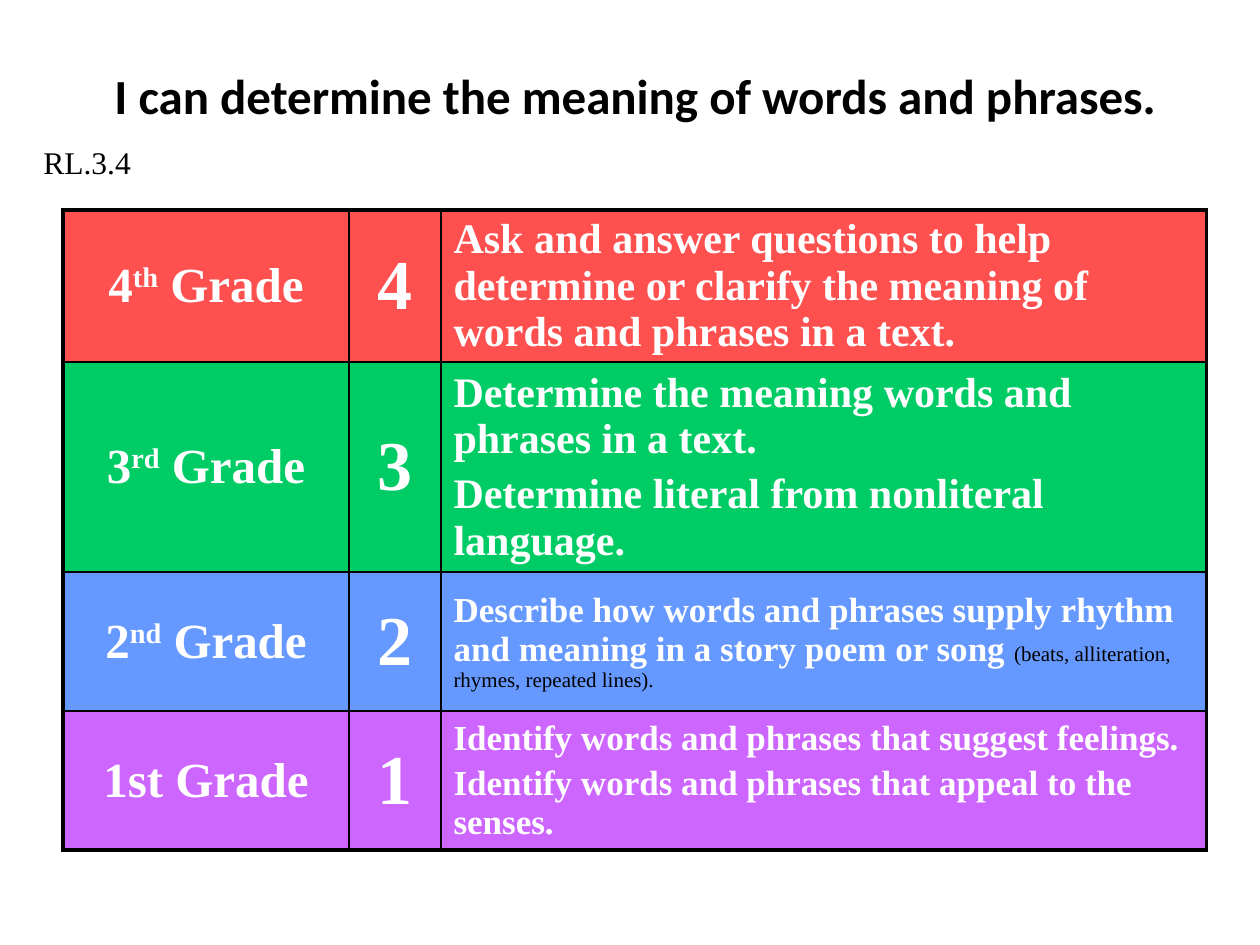
"""Build a slide with a learning goal and its four grade levels."""
from lxml.etree import SubElement as Sub
from pptx import Presentation as Deck
from pptx.dml.color import RGBColor as RGB
from pptx.enum.text import MSO_ANCHOR as Anchor, PP_ALIGN as Align
from pptx.oxml.ns import qn
from pptx.util import Pt

PX = 914400 / 126
HUE = {"ink": "000000", "text": "FFFFFF", "red": "FF5050",
       "green": "00CC66", "blue": "6699FF", "plum": "CC66FF"}
SERIF = "Times New Roman"


def px(*nums):
    return [round(n * PX) for n in nums]


def write(para, text, size, hue="text", bold=True, face=SERIF, base=0):
    run = para.add_run()
    run.text = text
    form = {"name": face, "size": Pt(size), "bold": bold}
    for key, val in form.items():
        setattr(run.font, key, val)
    run.font.color.rgb = RGB.from_string(HUE[hue])
    if base:
        run.font._element.set("baseline", str(base * 1000))


deck = Deck()
deck.slide_width, deck.slide_height = px(1260, 945)
slide = deck.slides.add_slide(deck.slide_layouts[6])

labels = [
    ((52, 32, 1166, 126), "I can determine the meaning of words and phrases.",
     28, True, "Calibri", Anchor.MIDDLE, Align.CENTER),
    ((31, 137, 179, 50), "RL.3.4", 18, False, SERIF, Anchor.TOP, Align.LEFT),
]
for place, text, size, bold, face, anchor, align in labels:
    frame = slide.shapes.add_textbox(*px(*place)).text_frame
    form = {"word_wrap": True, "vertical_anchor": anchor}
    for key, val in form.items():
        setattr(frame, key, val)
    para = frame.paragraphs[0]
    para.alignment = align
    write(para, text, size, "ink", bold, face)

levels = [
    ("red", 152, [("4", 0), ("th", 30), (" Grade", 0)], "4", 24,
     ["Ask and answer questions to help determine or clarify the meaning "
      "of words and phrases in a text."], "",
     [(2.25, 1, 2.25, 1.5), (1, 1, 2.25, 1.5), (1, 2, 2.25, 1.5)]),
    ("green", 207, [("3", 0), ("rd", 30), (" Grade", 0)], "3", 24,
     ["Determine the meaning words and phrases in a text.",
      "Determine literal from nonliteral language."], "",
     [(2.25, 1, 1.5, 1), (1, 1, 1.5, 1), (1, 2, 1.5, 1)]),
    ("blue", 139, [("2", 0), ("nd", 30), (" Grade", 0)], "2", 20,
     ["Describe how words and phrases supply rhythm and meaning in a story "
      "poem or song "], "(beats, alliteration, rhymes, repeated lines).",
     [(2.25, 1, 1, 1), (1, 1, 1, 1), (1, 2, 1, 1.5)]),
    ("plum", 139, [("1st Grade", 0)], "1", 20,
     ["Identify words and phrases that suggest feelings.",
      "Identify words and phrases that appeal to the senses."], "",
     [(2.25, 1, 1, 2), (1, 1, 1, 2), (1, 2, 1.5, 2)]),
]
grid = slide.shapes.add_table(len(levels), 3, *px(63, 210, 1144, 637)).table
flags = {"first_row": False, "horz_banding": False}
for key, val in flags.items():
    setattr(grid, key, val)
for col, wide in zip(grid.columns, px(286, 92, 766)):
    col.width = wide

for row, level in enumerate(levels):
    hue, high, grade, score, size, goals, note, edges = level
    grid.rows[row].height = px(high)[0]
    parts = [
        [[(text, 28, "text", True, SERIF, base) for text, base in grade]],
        [[(score, 40)]],
        [[(goal, size)] for goal in goals],
    ]
    if note:
        parts[2][-1].append((note, 12, "ink", False))
    for col, paras in enumerate(parts):
        cell = grid.cell(row, col)
        form = {"vertical_anchor": Anchor.MIDDLE,
                "margin_top": 0, "margin_bottom": 0}
        for key, val in form.items():
            setattr(cell, key, val)
        frame = cell.text_frame
        for num, runs in enumerate(paras):
            para = frame.add_paragraph() if num else frame.paragraphs[0]
            para.alignment = Align.LEFT if col == 2 else Align.CENTER
            gap = Sub(para._p.get_or_add_pPr(), qn("a:spcBef"))
            Sub(gap, qn("a:spcPct"), val="20000")
            for run in runs:
                write(para, *run)
        props = cell._tc.get_or_add_tcPr()
        for side, wide in zip("LRTB", edges[col]):
            line = Sub(props, qn(f"a:ln{side}"), w=str(Pt(wide)))
            fill = Sub(line, qn("a:solidFill"))
            Sub(fill, qn("a:srgbClr"), val=HUE["ink"])
        cell.fill.solid()
        cell.fill.fore_color.rgb = RGB.from_string(HUE[hue])

deck.save("out.pptx")
